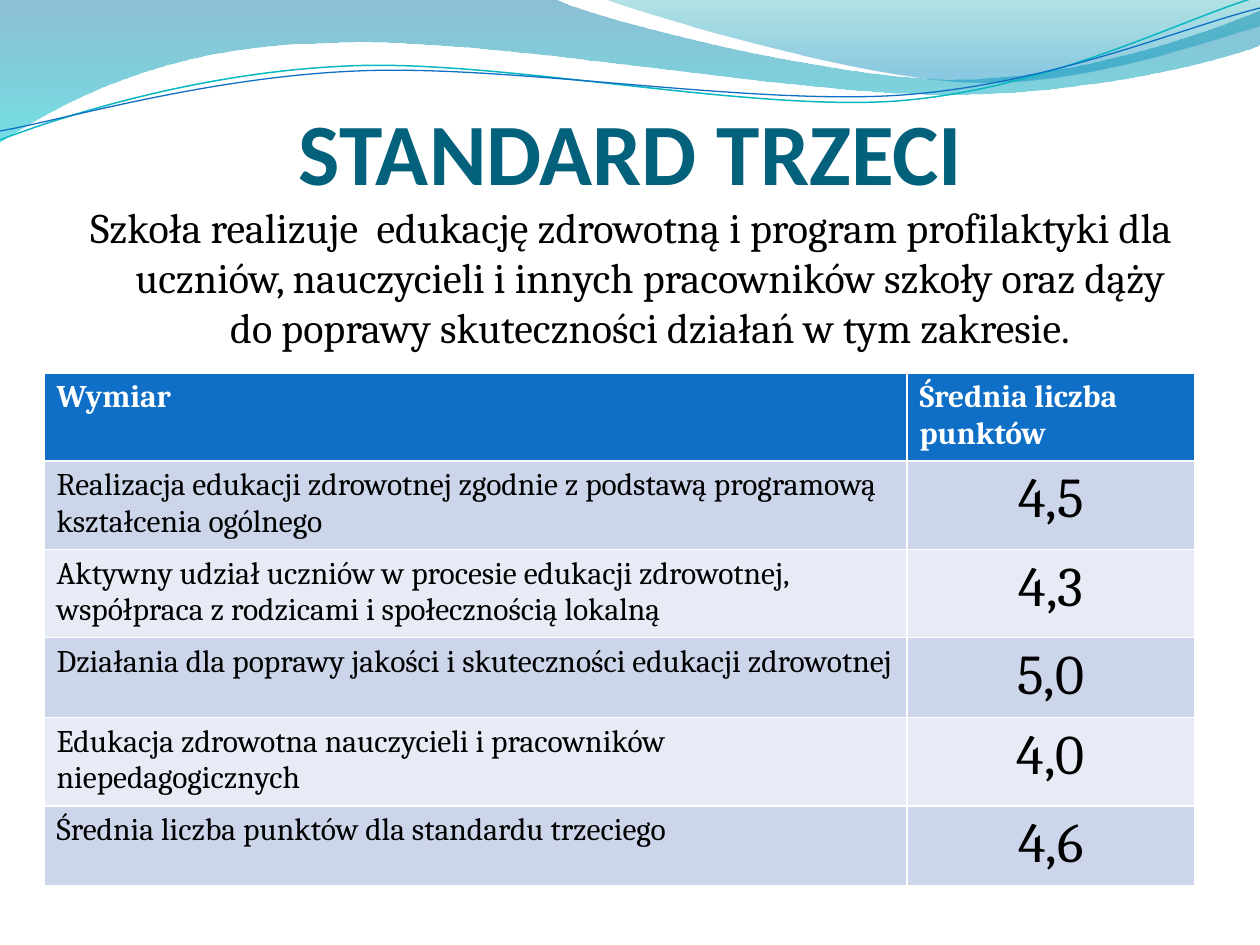
import math

import lxml.etree
import pptx
import pptx.dml.color
import pptx.enum.text
import pptx.oxml.ns
import pptx.util

PX = 914400 / 126
RGB = pptx.dml.color.RGBColor
Pt = pptx.util.Pt
CENTER = pptx.enum.text.PP_ALIGN.CENTER
BOTTOM = pptx.enum.text.MSO_ANCHOR.BOTTOM
qn = pptx.oxml.ns.qn

WHITE = RGB(0xFF, 0xFF, 0xFF)
BLACK = RGB(0x00, 0x00, 0x00)
TEAL = RGB(0x04, 0x61, 0x7B)
BLUE = RGB(0x0F, 0x6F, 0xC6)
AQUA = RGB(0x0A, 0xB8, 0xBF)
DARK = RGB(0xCC, 0xD5, 0xEA)
PALE = RGB(0xE7, 0xEB, 0xF5)
DEEP = RGB(0x00, 0x74, 0xA1)
CYAN = RGB(0x00, 0xC6, 0xCF)
GREEN = RGB(0x00, 0xA1, 0xA9)
SKY = RGB(0x00, 0x8B, 0xBF)

TILT = 2.7
WAVES = [
    ([(0, 0), (554, -1), (600, 21, 837, 79, 955, 79), (1075, 79, 1207, 33, 1260, 11),
      (1261, 45), (1239, 55, 1096, 96, 940, 94), (784, 94, 481, 35, 324, 43),
      (163, 45, 58, 105, -1, 142), (0, 0)],
     [(0, DEEP, 45), (1, CYAN, 55)]),
    ([(604, -1), (641, 14, 859, 78, 969, 82), (1079, 87, 1211, 40, 1260, 26),
      (1260, 0), (604, -1)],
     [(0, GREEN, 30), (0.8, SKY, 45)]),
]
LINES = [
    ([(0, 140), (60, 117, 199, 72, 349, 66), (498, 59, 747, 112, 898, 101),
      (1050, 89, 1182, 19, 1257, -3)], (629, 72), AQUA, 0.85),
    ([(0, 131), (59, 121, 207, 77, 357, 71), (508, 64, 752, 106, 903, 95),
      (1053, 84, 1186, 26, 1260, 8)], (629, 74), BLUE, 0.75),
]
HEAD = "STANDARD TRZECI"
LEAD = ("Szkoła realizuje  edukację zdrowotną i program profilaktyki dla uczniów, "
        "nauczycieli i innych pracowników szkoły oraz dąży do poprawy skuteczności "
        "działań w tym zakresie.")
ROWS = [
    ("Wymiar", "Średnia liczba punktów"),
    ("Realizacja edukacji zdrowotnej zgodnie z podstawą programową kształcenia ogólnego", "4,5"),
    ("Aktywny udział uczniów w procesie edukacji zdrowotnej, współpraca z rodzicami "
     "i społecznością lokalną", "4,3"),
    ("Działania dla poprawy jakości i skuteczności edukacji zdrowotnej", "5,0"),
    ("Edukacja zdrowotna nauczycieli i pracowników niepedagogicznych", "4,0"),
    ("Średnia liczba punktów dla standardu trzeciego", "4,6"),
]


def px(n):
    return pptx.util.Emu(round(n * PX))


def turn(dot, hub, angle):
    a = math.radians(angle)
    x, y = dot[0] - hub[0], dot[1] - hub[1]
    return (hub[0] + x * math.cos(a) - y * math.sin(a),
            hub[1] + x * math.sin(a) + y * math.cos(a))


def draw(slide, box, curve, hub=(0, 0), tilt=0):
    dots = [turn(part[i:i + 2], hub, tilt)
            for part in curve for i in range(0, len(part), 2)]
    dots = [(px(box[0] + x), px(box[1] + y)) for x, y in dots]
    form = slide.shapes.build_freeform(*dots[0])
    form.add_line_segments(dots[1:], close=curve[0] == curve[-1])
    shape = form.convert_to_shape()
    shape.shadow.inherit = False
    shape.rotation = -tilt
    steps = iter(list(shape._element.iter(qn("a:lnTo"))))
    for part in curve[1:]:
        step = next(steps)
        if len(part) == 6:
            bend = lxml.etree.Element(qn("a:cubicBezTo"))
            step.addprevious(bend)
            for item in (step, next(steps), next(steps)):
                bend.append(item[0])
                item.getparent().remove(item)
    return shape


def add_waves(slide, box):
    for curve, stops in WAVES:
        shape = draw(slide, box, curve)
        shape.line.fill.background()
        shape.fill.gradient()
        shape.fill.gradient_angle = 270
        for stop, (place, color, _) in zip(shape.fill.gradient_stops, stops):
            stop.position = place
            stop.color.rgb = color
        tints = shape._element.spPr.iter(qn("a:srgbClr"))
        for tint, (_, _, alpha) in zip(tints, stops):
            lxml.etree.SubElement(tint, qn("a:alpha"), val=str(alpha * 1000))
    for curve, hub, color, width in LINES:
        shape = draw(slide, box, curve, hub, TILT)
        shape.fill.background()
        shape.line.color.rgb = color
        shape.line.width = Pt(width)


def style(part, size, face, color, bold=False):
    for run in part.runs:
        run.font.size = Pt(size)
        run.font.name = face
        run.font.color.rgb = color
        run.font.bold = bold


def add_text(slide, box, text):
    frame = slide.shapes.add_textbox(*map(px, box)).text_frame
    frame.word_wrap = True
    frame.text = text
    frame.paragraphs[0].alignment = CENTER
    return frame


def add_head(slide, box):
    frame = add_text(slide, box, HEAD)
    frame.vertical_anchor = BOTTOM
    frame.margin_left = frame.margin_right = frame.margin_bottom = 0
    style(frame.paragraphs[0], 50, "Calibri", TEAL, True)


def add_lead(slide, box):
    part = add_text(slide, box, LEAD).paragraphs[0]
    part.space_before = Pt(5)
    props = part._p.get_or_add_pPr()
    props.set("marL", str(px(38)))
    props.set("indent", str(px(-38)))
    style(part, 24, "Cambria", BLACK)


def add_grid(slide, box):
    frame = slide.shapes.add_table(len(ROWS), 2, *map(px, box))
    table = frame.table
    wide = box[2] * 3 // 4
    table.columns[0].width = px(wide)
    table.columns[1].width = px(box[2] - wide)
    for r, row in enumerate(ROWS):
        table.rows[r].height = px(52)
        for c, text in enumerate(row):
            cell = table.cell(r, c)
            cell.text_frame.text = text
            part = cell.text_frame.paragraphs[0]
            score = r > 0 and c == 1
            if score:
                part.alignment = CENTER
            style(part, 32 if score else 18, "Cambria", BLACK if r else WHITE, r == 0)
            cell.fill.solid()
            cell.fill.fore_color.rgb = BLUE if r == 0 else DARK if r % 2 else PALE
    frame.height = px(box[3])


def main():
    deck = pptx.Presentation()
    deck.slide_width = px(1260)
    deck.slide_height = px(945)
    slide = deck.slides.add_slide(deck.slide_layouts[6])
    add_waves(slide, (0, 0, 1260, 142))
    add_head(slide, (64, 45, 1134, 158))
    add_lead(slide, (64, 195, 1134, 605))
    add_grid(slide, (44, 373, 1151, 520))
    deck.save("out.pptx")


if __name__ == "__main__":
    main()
